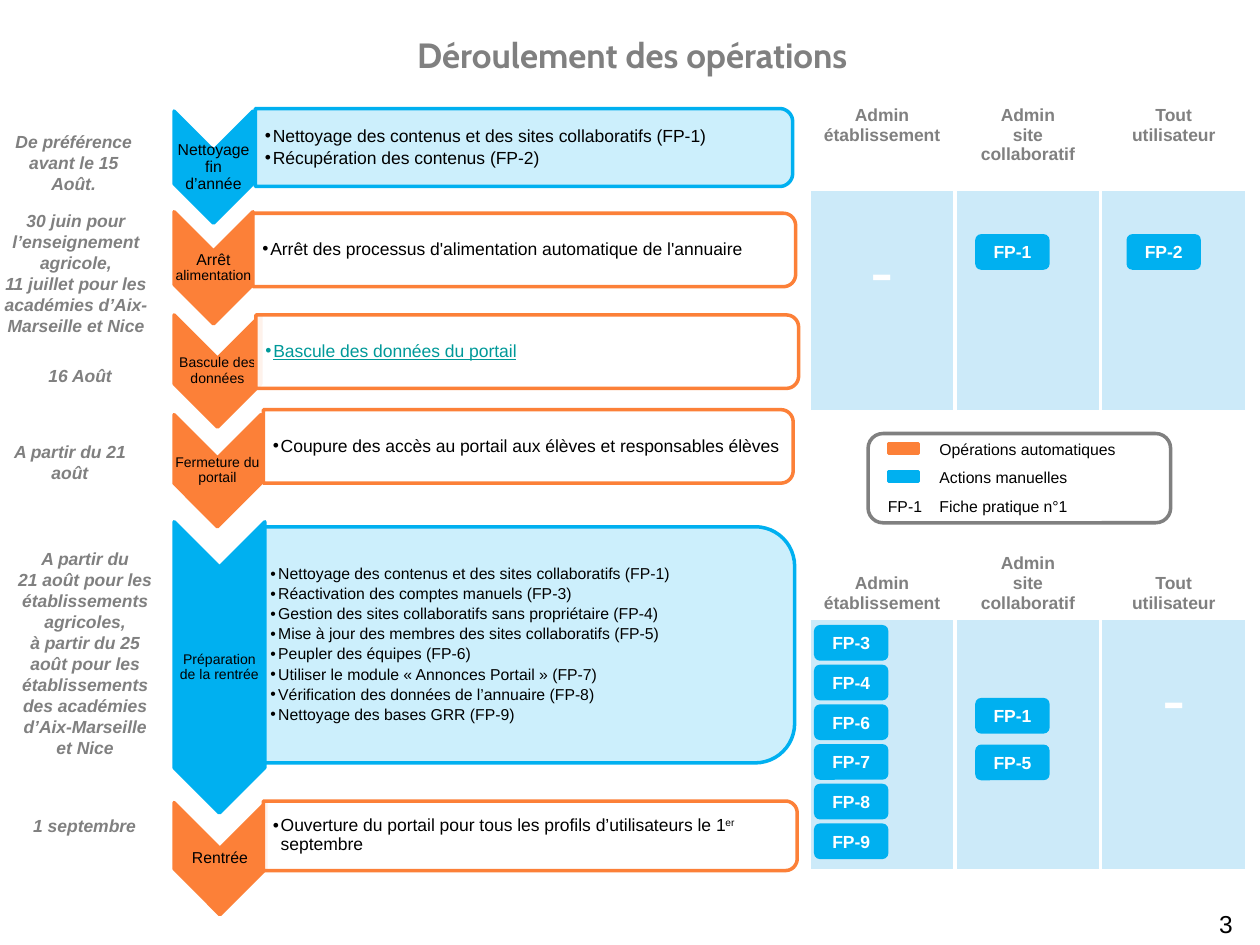
from math import cos, pi, sin

from lxml.etree import SubElement
from pptx import Presentation
from pptx.dml.color import RGBColor
from pptx.enum.shapes import MSO_SHAPE as SHAPE
from pptx.enum.text import MSO_ANCHOR as ANCHOR, PP_ALIGN as ALIGN
from pptx.oxml.ns import qn
from pptx.util import Cm, Pt

BLUE = RGBColor(0x00, 0xB0, 0xF0)
ORANGE = RGBColor(0xFC, 0x80, 0x38)
CELL_BLUE = RGBColor(0x00, 0x9A, 0xE5)
GREY = RGBColor(0x80, 0x80, 0x80)
TEAL = RGBColor(0x00, 0x99, 0x99)
BLACK = RGBColor(0, 0, 0)
WHITE = RGBColor(0xFF, 0xFF, 0xFF)


def write(tf, paragraphs, size, color=BLACK, align=ALIGN.CENTER, bold=False,
          italic=False, font="Arial", bullet=False, spacing=None):
    """Fill a text frame; each paragraph is a list of runs."""
    tf.word_wrap = True
    for i, runs in enumerate(paragraphs):
        p = tf.add_paragraph() if i else tf.paragraphs[0]
        p.alignment = align
        if spacing:
            p.line_spacing = spacing
        if bullet:
            p.space_after = Pt(1.7)
            pPr = p._p.get_or_add_pPr()
            pPr.set("marL", str(Cm(0.16)))
            pPr.set("indent", str(-Cm(0.16)))
            SubElement(pPr, qn("a:buFont"), typeface="Arial")
            SubElement(pPr, qn("a:buChar"), char="•")
        for text in runs:
            r = p.add_run()
            r.text = text
            r.font.name, r.font.size = font, Pt(size)
            r.font.bold, r.font.italic = bold, italic
            r.font.color.rgb = color


def add_outline(points, fill, line, insets):
    """Add a closed polygon through points given in cm."""
    points = [(Cm(x), Cm(y)) for x, y in points]
    builder = s.shapes.build_freeform(*points[0])
    builder.add_line_segments(points[1:], close=True)
    sp = builder.convert_to_shape()
    sp.shadow.inherit = False
    sp.fill.solid()
    sp.fill.fore_color.rgb = fill
    sp.line.color.rgb = line
    sp.line.width = Pt(2)
    tf = sp.text_frame
    tf.vertical_anchor = ANCHOR.MIDDLE
    tf.margin_left, tf.margin_top, tf.margin_right, tf.margin_bottom = map(Cm, insets)
    return sp


prs = Presentation()
prs.slide_width, prs.slide_height = Cm(25.4), Cm(19.05)
s = prs.slides.add_slide(prs.slide_layouts[6])
translucent = []

title = s.shapes.add_textbox(Cm(0.05), Cm(0.56), Cm(25.4), Cm(1.12))
write(title.text_frame, [["Déroulement des opérations"]], 20, GREY, bold=True, font="Cabin")

# Steps: colour, chevron (top, width, height), label and size, box, items and size
STEPS = [
    (BLUE, (2.24, 1.59, 2.26), ["Nettoyage fin d’année"], 9, (5.15, 2.19, 10.83, 1.57),
     [["Nettoyage des contenus et des sites collaboratifs (FP-1)"],
      ["Récupération des contenus (FP-2)"]], 10),
    (ORANGE, (4.27, 1.59, 2.26), ["Arrêt ", "alimentation"], 9, (5.1, 4.3, 10.94, 1.48),
     [["Arrêt des processus d'alimentation automatique de l'annuaire"]], 10),
    (ORANGE, (6.35, 1.75, 2.26), ["Bascule des données"], 8, (5.16, 6.35, 10.94, 1.48),
     [["Bascule des données du portail"]], 10),
    (ORANGE, (8.36, 1.75, 2.26), ["Fermeture du portail"], 8, (5.31, 8.26, 10.68, 1.48),
     [["Coupure des accès au portail aux élèves et responsables élèves"]], 10),
    (BLUE, (10.52, 1.83, 5.87), ["Préparation de la rentrée"], 8, (5.26, 10.62, 10.76, 4.76),
     [["Nettoyage des contenus et des sites collaboratifs (FP-1)"],
      ["Réactivation des comptes manuels (FP-3)"],
      ["Gestion des sites collaboratifs sans propriétaire (FP-4)"],
      ["Mise à jour des membres des sites collaboratifs (FP-5)"],
      ["Peupler des équipes (FP-6)"],
      ["Utiliser le module « Annonces Portail » (FP-7)"],
      ["Vérification des données de l’annuaire (FP-8)"],
      ["Nettoyage des bases GRR (FP-9)"]], 9),
    (ORANGE, (16.18, 1.85, 2.26), ["Rentrée"], 9, (5.31, 16.15, 10.76, 1.4),
     [["Ouverture du portail pour tous les profils d’utilisateurs le 1", "er", " septembre"]], 10),
]
CHEVRON_LEFT = 3.51
labels, boxes = [], []
for color, (top, w, h), label, label_size, (bx, by, bw, bh), items, size in STEPS:
    left, mid, right = CHEVRON_LEFT, CHEVRON_LEFT + w / 2, CHEVRON_LEFT + w
    tip = w / 2
    chevron = add_outline(
        [(right, top), (right, top + h - tip), (mid, top + h),
         (left, top + h - tip), (left, top), (mid, top + tip)],
        color, color, (0.02, tip, 0.02, tip))
    write(chevron.text_frame, [label], label_size, spacing=0.9)
    labels.append(chevron.text_frame.paragraphs[0].runs)

    radius = bh / 6
    angles = [pi / 2 * i / 12 for i in range(13)]
    arc = [(radius * (1 - sin(a)), radius * (1 - cos(a))) for a in angles]
    upper = [(bx + bw - dx, by + dy) for dx, dy in arc]
    lower = [(bx + bw - dx, by + bh - dy) for dx, dy in reversed(arc)]
    box = add_outline([(bx, by)] + upper + lower + [(bx, by + bh)],
                      BLUE if color == BLUE else WHITE, color, (0.19, 0.09, 0.09, 0.09))
    translucent.append((box._element.spPr, 20 if color == BLUE else 90))
    write(box.text_frame, items, size, align=ALIGN.LEFT, bullet=True, spacing=0.9)
    boxes.append(box.text_frame.paragraphs[0].runs)

labels[1][1].font.size = Pt(8)
boxes[2][0].font.color.rgb = TEAL
boxes[2][0].font.underline = True
boxes[5][1].font._element.set("baseline", "30000")

DATES = [
    (-0.13, 2.51, 3.23, 1.55, [["De préférence"], ["avant le 15 Août."]]),
    (-0.3, 4.11, 3.66, 2.82, [["30 juin pour l’enseignement agricole,"],
                              ["11 juillet pour les académies d’Aix-Marseille et Nice"]]),
    (0, 7.24, 3.23, 0.69, [["16 Août"]]),
    (0, 8.76, 2.82, 1.12, [["A partir du 21 août"]]),
    (0.1, 10.92, 3.23, 4.52, [["A partir du"], ["21 août pour les établissements agricoles,"],
                              ["à partir du 25 août pour les établissements "
                               "des académies d’Aix-Marseille et Nice"]]),
    (0.09, 16.31, 3.23, 0.69, [["1 septembre"]]),
]
for x, y, w, h, text in DATES:
    tb = s.shapes.add_textbox(Cm(x), Cm(y), Cm(w), Cm(h))
    write(tb.text_frame, text, 10, GREY, bold=True, italic=True)

# Table of practical sheets by role
ROLES = [[["Admin"], ["établissement"]], [["Admin"], ["site collaboratif"]],
         [["Tout"], ["utilisateur"]]]
ROW_HEIGHTS = [1.83, 4.45, 4.19, 5.05]
DASHES = [(1, 0), (3, 2)]
table = s.shapes.add_table(4, 3, Cm(16.31), Cm(2.01), Cm(8.82), Cm(sum(ROW_HEIGHTS))).table
table.first_row = table.horz_banding = False
for col in table.columns:
    col.width = Cm(2.94)
for i, height in enumerate(ROW_HEIGHTS):
    table.rows[i].height = Cm(height)
    for j, role in enumerate(ROLES):
        cell = table.cell(i, j)
        tcPr = cell._tc.get_or_add_tcPr()
        for side, width in (("L", 2.25), ("R", 2.25), ("T", 1), ("B", 1)):
            ln = SubElement(tcPr, qn(f"a:ln{side}"), w=str(Pt(width)))
            SubElement(SubElement(ln, qn("a:solidFill")), qn("a:srgbClr"), val=str(WHITE))
        if i % 2:
            cell.fill.solid()
            cell.fill.fore_color.rgb = CELL_BLUE
            translucent.append((tcPr, 20))
        else:
            cell.fill.background()
            cell.vertical_anchor = ANCHOR.BOTTOM if i else ANCHOR.TOP
            write(cell.text_frame, role, 10, GREY, bold=True)
        if (i, j) in DASHES:
            cell.margin_top = Cm(0.86)
            write(cell.text_frame, [["-"]], 40, WHITE)

for props, percent in translucent:
    rgb = props.find(f"{qn('a:solidFill')}/{qn('a:srgbClr')}")
    SubElement(rgb, qn("a:alpha"), val=str(percent * 1000))

# Sheet badges: left, first top, step, numbers
BADGES = [(19.66, 4.72, 0, [1]), (22.71, 4.72, 0, [2]),
          (16.41, 12.6, 0.8, [3, 4, 6, 7, 8, 9]), (19.66, 14.07, 0.94, [1, 5])]
for x, top, step, numbers in BADGES:
    for i, number in enumerate(numbers):
        badge = s.shapes.add_shape(SHAPE.ROUNDED_RECTANGLE,
                                   Cm(x), Cm(top + i * step), Cm(1.5), Cm(0.72))
        badge.shadow.inherit = False
        badge.fill.solid()
        badge.fill.fore_color.rgb = BLUE
        badge.line.fill.background()
        tf = badge.text_frame
        tf.margin_left = tf.margin_right = 0
        tf.vertical_anchor = ANCHOR.MIDDLE
        write(tf, [[f"FP-{number}"]], 10, WHITE, bold=True)

# Legend
LEGEND = [(ORANGE, "Opérations automatiques"), (BLUE, "Actions manuelles"),
          (None, "Fiche pratique n°1")]
for i, (color, text) in enumerate(LEGEND):
    y = 8.74 + i * 0.57
    if color:
        swatch = s.shapes.add_shape(SHAPE.RECTANGLE, Cm(17.91), Cm(y + 0.2), Cm(0.61), Cm(0.2))
        swatch.shadow.inherit = False
        swatch.fill.solid()
        swatch.fill.fore_color.rgb = color
        swatch.line.color.rgb = color
        swatch.line.width = Pt(2)
    else:
        key = s.shapes.add_textbox(Cm(17.65), Cm(y), Cm(1.4), Cm(0.64))
        write(key.text_frame, [["FP-1"]], 9, align=ALIGN.LEFT)
    tb = s.shapes.add_textbox(Cm(18.69), Cm(y), Cm(4.6), Cm(0.64))
    write(tb.text_frame, [[text]], 9, align=ALIGN.LEFT)
frame = s.shapes.add_shape(SHAPE.ROUNDED_RECTANGLE, Cm(17.5), Cm(8.74), Cm(6.1), Cm(1.8))
frame.shadow.inherit = False
frame.fill.background()
frame.line.color.rgb = GREY
frame.line.width = Pt(2)

page_number = s.shapes.add_textbox(Cm(19.18), Cm(18.21), Cm(5.92), Cm(0.8))
write(page_number.text_frame, [["3"]], 14, align=ALIGN.RIGHT)

prs.save("out.pptx")
